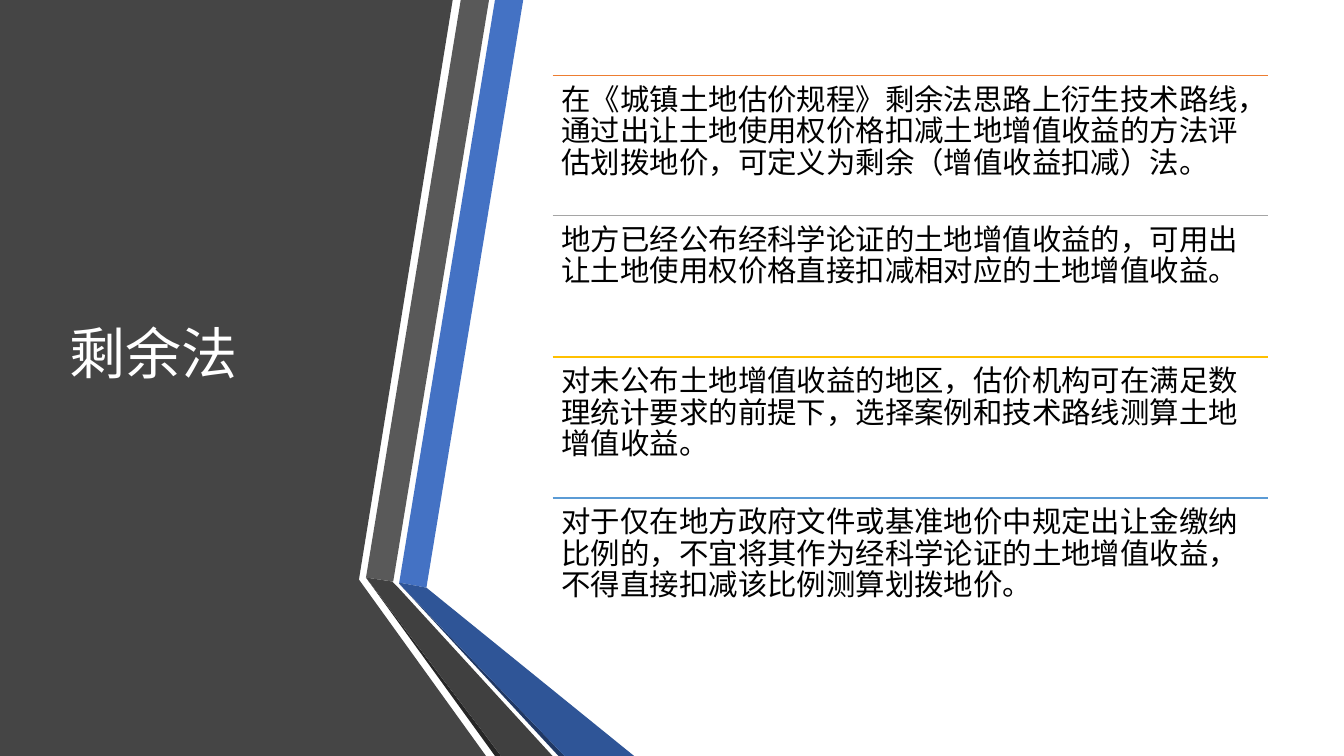
from lxml import etree
from pptx import Presentation
from pptx.dml.color import RGBColor
from pptx.enum.shapes import MSO_CONNECTOR
from pptx.enum.text import MSO_ANCHOR, MSO_AUTO_SIZE, PP_ALIGN
from pptx.oxml.ns import qn
from pptx.util import Pt

PX = 9144
FONT = "Noto Sans CJK SC"
LINE = MSO_CONNECTOR.STRAIGHT
LEFT = PP_ALIGN.LEFT
TOP, MIDDLE = MSO_ANCHOR.TOP, MSO_ANCHOR.MIDDLE
NO_FIT = MSO_AUTO_SIZE.NONE

WHITE = RGBColor(0xFF, 0xFF, 0xFF)
BLACK = RGBColor(0x00, 0x00, 0x00)
PANEL = RGBColor(0x45, 0x45, 0x45)
BLUE = RGBColor(0x44, 0x72, 0xC4)
GRAY = RGBColor(0x59, 0x59, 0x59)
INK = RGBColor(0x26, 0x26, 0x26)
NAVY = RGBColor(0x20, 0x38, 0x64)
DEEP = RGBColor(0x2F, 0x55, 0x97)
DARK = RGBColor(0x40, 0x40, 0x40)
ORANGE = RGBColor(0xED, 0x7D, 0x31)
SILVER = RGBColor(0xA5, 0xA5, 0xA5)
GOLD = RGBColor(0xFF, 0xC0, 0x00)
SKY = RGBColor(0x5B, 0x9B, 0xD5)

BANDS = [
    (PANEL, [(0, 0), (449, 0), (356, 575), (482, 750), (0, 750)]),
    (BLUE, [(396, 578), (423, 583), (519, 0), (491, 0)]),
    (GRAY, [(485, 0), (457, 0), (363, 573), (390, 577)]),
    (INK, [(363, 573), (491, 750), (497, 750)]),
    (NAVY, [(396, 579), (554, 750), (560, 750)]),
    (DEEP, [(396, 578), (396, 579), (560, 750), (629, 750), (423, 583)]),
    (DARK, [(548, 750), (395, 583), (389, 577), (363, 573), (497, 750)]),
]

POINTS = [
    (ORANGE, "在《城镇土地估价规程》剩余法思路上衍生技术路线，通过出让土地使用权价格"
             "扣减土地增值收益的方法评估划拨地价，可定义为剩余（增值收益扣减）法。"),
    (SILVER, "地方已经公布经科学论证的土地增值收益的，可用出让土地使用权价格直接扣减"
             "相对应的土地增值收益。"),
    (GOLD, "对未公布土地增值收益的地区，估价机构可在满足数理统计要求的前提下，"
           "选择案例和技术路线测算土地增值收益。"),
    (SKY, "对于仅在地方政府文件或基准地价中规定出让金缴纳比例的，不宜将其作为"
          "经科学论证的土地增值收益，不得直接扣减该比例测算划拨地价。"),
]


def put(shape, text, size=21, color=BLACK, anchor=TOP, inset=(9, 9)):
    """Fill a shape with one formatted paragraph."""
    frame = shape.text_frame
    frame.word_wrap = True
    frame.auto_size = NO_FIT
    frame.vertical_anchor = anchor
    frame.margin_left = frame.margin_right = inset[0] * PX
    frame.margin_top = frame.margin_bottom = inset[1] * PX
    para = frame.paragraphs[0]
    para.alignment = LEFT
    para.line_spacing = 0.9
    run = para.add_run()
    run.text = text
    font = run.font
    font.size = Pt(size)
    font.color.rgb = color
    font.name = FONT
    east = etree.SubElement(run.font.latin if hasattr(font, "latin") else
                            run._r.get_or_add_rPr(), qn("a:ea"))
    east.set("typeface", FONT)


def draw_bands(slide, left, top):
    """Draw the dark panel and its folded ribbons from a corner."""
    for color, dots in BANDS:
        pen = slide.shapes.build_freeform(*dots[0], scale=PX)
        pen.add_line_segments(dots[1:], close=True)
        band = pen.convert_to_shape(left * PX, top * PX)
        band.shadow.inherit = False
        band.fill.solid()
        band.fill.fore_color.rgb = color
        band.line.fill.background()


def set_title(slide, left, top, width, height):
    """Place the title in its box, in front of the panel."""
    title = slide.shapes.title
    title.left, title.top = left * PX, top * PX
    title.width, title.height = width * PX, height * PX
    put(title, "剩余法", size=40, color=WHITE, anchor=MIDDLE, inset=(10, 5))
    title.element.getparent().append(title.element)


def draw_list(slide, left, top, width, height):
    """Stack the ruled points in equal rows of a box."""
    row = height / len(POINTS)
    for i, (color, text) in enumerate(POINTS):
        y = round(top + i * row) * PX
        rule = slide.shapes.add_connector(
            LINE, left * PX, y, (left + width) * PX, y)
        rule.line.color.rgb = color
        rule.line.width = Pt(1)
        etree.SubElement(rule.element.spPr, qn("a:effectLst"))
        box = slide.shapes.add_textbox(
            left * PX, y, width * PX, round(row) * PX)
        put(box, text)


def main():
    """Build the slide and save it."""
    deck = Presentation()
    deck.slide_width, deck.slide_height = 1333 * PX, 750 * PX
    slide = deck.slides.add_slide(deck.slide_layouts[5])
    draw_bands(slide, 0, 0)
    set_title(slide, 59, 75, 304, 558)
    draw_list(slide, 548, 75, 710, 558)
    deck.save("out.pptx")


if __name__ == "__main__":
    main()
